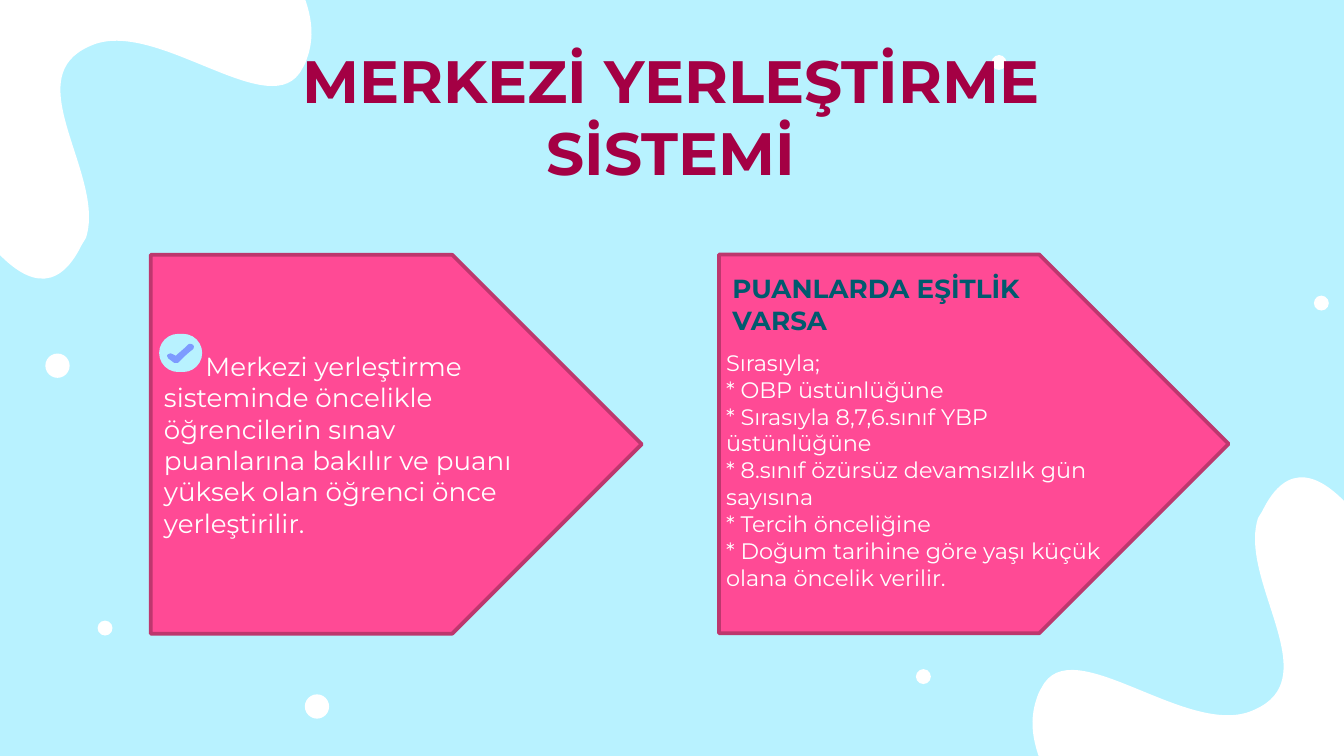
from dataclasses import dataclass
from math import cos, radians, sin

from lxml import etree
from pptx import Presentation
from pptx.dml.color import RGBColor
from pptx.enum.shapes import MSO_SHAPE
from pptx.enum.text import MSO_ANCHOR, MSO_AUTO_SIZE, PP_ALIGN
from pptx.oxml.ns import qn
from pptx.util import Pt

ELLIPSE = MSO_SHAPE.OVAL
ROUNDED = MSO_SHAPE.ROUNDED_RECTANGLE
PENTAGON = MSO_SHAPE.PENTAGON
MIDDLE = MSO_ANCHOR.MIDDLE
GROW = MSO_AUTO_SIZE.SHAPE_TO_FIT_TEXT
CENTER = PP_ALIGN.CENTER
LEFT = PP_ALIGN.LEFT

FONT = "Montserrat"
WIDTH, HEIGHT = 720, 405
COLORS = {
    "sky": "B8F2FF",
    "white": "FFFFFF",
    "title": "A40044",
    "pink": "FF4A95",
    "border": "BD376E",
    "heading": "005A6E",
    "check": "7D9BFF",
}


@dataclass
class Box:
    left: float
    top: float
    width: float
    height: float


@dataclass
class Style:
    size: float
    color: str
    bold: bool = False
    align: PP_ALIGN = LEFT


@dataclass
class Outline:
    box: Box
    rotation: float
    start: tuple
    curves: list


DOTS = [
    Box(24.3, 189.4, 13, 13),
    Box(52.3, 332.5, 8, 8),
    Box(531.2, 29.5, 8, 8),
    Box(703.9, 158.4, 8, 8),
    Box(490.7, 358.5, 8, 8),
    Box(163.3, 372, 13, 13),
]

CORNER = Outline(Box(-161.3, -161.3, 418.3, 276.5), 289, (-65.5, -116.6), [
    ((-86.4, -56.9), (-72, 18.7), (-41, 74.9)),
    ((-27.4, 97.9), (16.6, 187.2), (43.9, 131)),
    ((44.6, 129.6), (45.4, 128.9), (46.1, 127.4)),
    ((54.7, 100.8), (25.9, 61.9), (33.8, 38.9)),
    ((36, 32.4), (41, 27.4), (50.4, 23.8)),
    ((85.7, 10.8), (146.2, 67.7), (162, 36.7)),
    ((163.4, 34.6), (164.2, 32.4), (164.9, 30.2)),
    ((175.7, -2.2), (139.7, -27.4), (150.5, -57.6)),
    ((152.6, -64.1), (156.2, -71.3), (163.4, -77.8)),
    ((182.9, -97.2), (221, -100.8), (227.5, -119.5)),
    ((230.4, -128.9), (225.4, -141.8), (205.9, -162)),
    ((168.5, -203), (81.4, -220.3), (30.2, -205.9)),
    ((-21.6, -190.8), (-51.8, -157.7), (-65.5, -116.6)),
])

CHECK = Outline(Box(90, 185, 13.4, 8.7), 0, (102.2, 185), [
    ((102.2, 185), (101.5, 185), (101.5, 185)),
    ((99.4, 187.2), (96.5, 189.4), (94.3, 191.5)),
    ((93.6, 190.8), (92.2, 190.8), (91.4, 190.1)),
    ((90, 190.1), (90, 190.8), (90.7, 191.5)),
    ((91.4, 192.2), (92.9, 193), (93.6, 193.7)),
    ((94.3, 193.7), (95, 193.7), (95, 193.7)),
    ((97.9, 190.8), (100.1, 188.6), (103, 186.5)),
    ((103.7, 185.8), (103, 185), (102.2, 185)),
])

PLACEMENT = [
    "Merkezi yerleştirme sisteminde öncelikle öğrencilerin sınav",
    "puanlarına bakılır ve puanı yüksek olan öğrenci önce yerleştirilir.",
]
TIE_RULES = [
    "Sırasıyla;",
    "* OBP üstünlüğüne",
    "* Sırasıyla 8,7,6.sınıf YBP üstünlüğüne",
    "* 8.sınıf özürsüz devamsızlık gün sayısına",
    "* Tercih önceliğine",
    "* Doğum tarihine göre yaşı küçük olana öncelik verilir.",
]


def rgb(name: str) -> RGBColor:
    return RGBColor.from_string(COLORS[name])


def lengths(box: Box) -> list:
    return [Pt(v) for v in (box.left, box.top, box.width, box.height)]


def paint(sp, fill: str, line: str = "", weight: float = 0) -> None:
    sp.shadow.inherit = False
    sp.fill.solid()
    sp.fill.fore_color.rgb = rgb(fill)
    if line:
        sp.line.color.rgb = rgb(line)
        sp.line.width = Pt(weight)
    else:
        sp.line.fill.background()


def add_preset(s, kind: MSO_SHAPE, box: Box, fill: str, line: str = "", weight: float = 0):
    sp = s.shapes.add_shape(kind, *lengths(box))
    paint(sp, fill, line, weight)
    return sp


def to_frame(point: tuple, outline: Outline) -> tuple:
    box = outline.box
    dx = point[0] - box.left - box.width / 2
    dy = point[1] - box.top - box.height / 2
    angle = radians(-outline.rotation)
    return (dx * cos(angle) - dy * sin(angle) + box.width / 2,
            dx * sin(angle) + dy * cos(angle) + box.height / 2)


def add_outline(s, outline: Outline, fill: str, line: str = "", weight: float = 0):
    left, top, width, height = lengths(outline.box)
    builder = s.shapes.build_freeform(left, top)
    builder.add_line_segments([(left + width, top + height)])
    sp = builder.convert_to_shape()
    geometry = next(sp._element.iter(qn("a:path")))
    for child in list(geometry):
        geometry.remove(child)
    steps = [("a:moveTo", [outline.start])]
    steps += [("a:cubicBezTo", curve) for curve in outline.curves]
    for tag, points in steps:
        step = etree.SubElement(geometry, qn(tag))
        for point in points:
            x, y = to_frame(point, outline)
            etree.SubElement(step, qn("a:pt"), x=str(Pt(x)), y=str(Pt(y)))
    etree.SubElement(geometry, qn("a:close"))
    sp.rotation = outline.rotation
    paint(sp, fill, line, weight)
    return sp


def write(tf, lines: list, style: Style) -> None:
    tf.word_wrap = True
    for i, line in enumerate(lines):
        p = tf.add_paragraph() if i else tf.paragraphs[0]
        p.text = line
        p.alignment = style.align
        p.font.name = FONT
        p.font.size = Pt(style.size)
        p.font.bold = style.bold
        p.font.color.rgb = rgb(style.color)


def add_text(s, box: Box, lines: list, style: Style):
    tf = s.shapes.add_textbox(*lengths(box)).text_frame
    write(tf, lines, style)
    return tf


def main() -> None:
    prs = Presentation()
    prs.slide_width, prs.slide_height = Pt(WIDTH), Pt(HEIGHT)
    s = prs.slides.add_slide(prs.slide_layouts[6])
    s.background.fill.solid()
    s.background.fill.fore_color.rgb = rgb("sky")

    for dot in DOTS:
        add_preset(s, ELLIPSE, dot, "white")
    add_outline(s, CORNER, "white")
    opposite = add_outline(s, CORNER, "white")
    opposite.left = Pt(WIDTH) - opposite.left - opposite.width
    opposite.top = Pt(HEIGHT) - opposite.top - opposite.height
    opposite.rotation = CORNER.rotation - 180

    title = add_text(s, Box(56, 16.2, 607, 52), ["MERKEZİ YERLEŞTİRME\nSİSTEMİ"],
                     Style(32, "title", True, CENTER))
    title.margin_top = title.margin_bottom = Pt(7.2)

    sp = add_preset(s, PENTAGON, Box(80.8, 136.5, 263, 203), "pink", "border", 2)
    tf = sp.text_frame
    tf.vertical_anchor = MIDDLE
    write(tf, PLACEMENT, Style(14, "white"))
    tf.paragraphs[0]._p.get_or_add_pPr().set("indent", str(Pt(22.2)))

    badge = add_preset(s, ROUNDED, Box(86.4, 180, 20.8, 18.2), "sky", "sky", 2.25)
    badge.adjustments[0] = 0.5
    add_outline(s, CHECK, "check", "check", 1.5)

    add_preset(s, PENTAGON, Box(385.2, 136.3, 273, 203), "pink", "border", 2)
    heading = add_text(s, Box(385.3, 142.6, 179.5, 41), ["PUANLARDA EŞİTLİK VARSA"],
                       Style(14, "heading", True))
    rules = add_text(s, Box(381.9, 183.4, 219, 138), TIE_RULES, Style(12, "white"))
    heading.auto_size = rules.auto_size = GROW

    prs.save("out.pptx")


if __name__ == "__main__":
    main()
